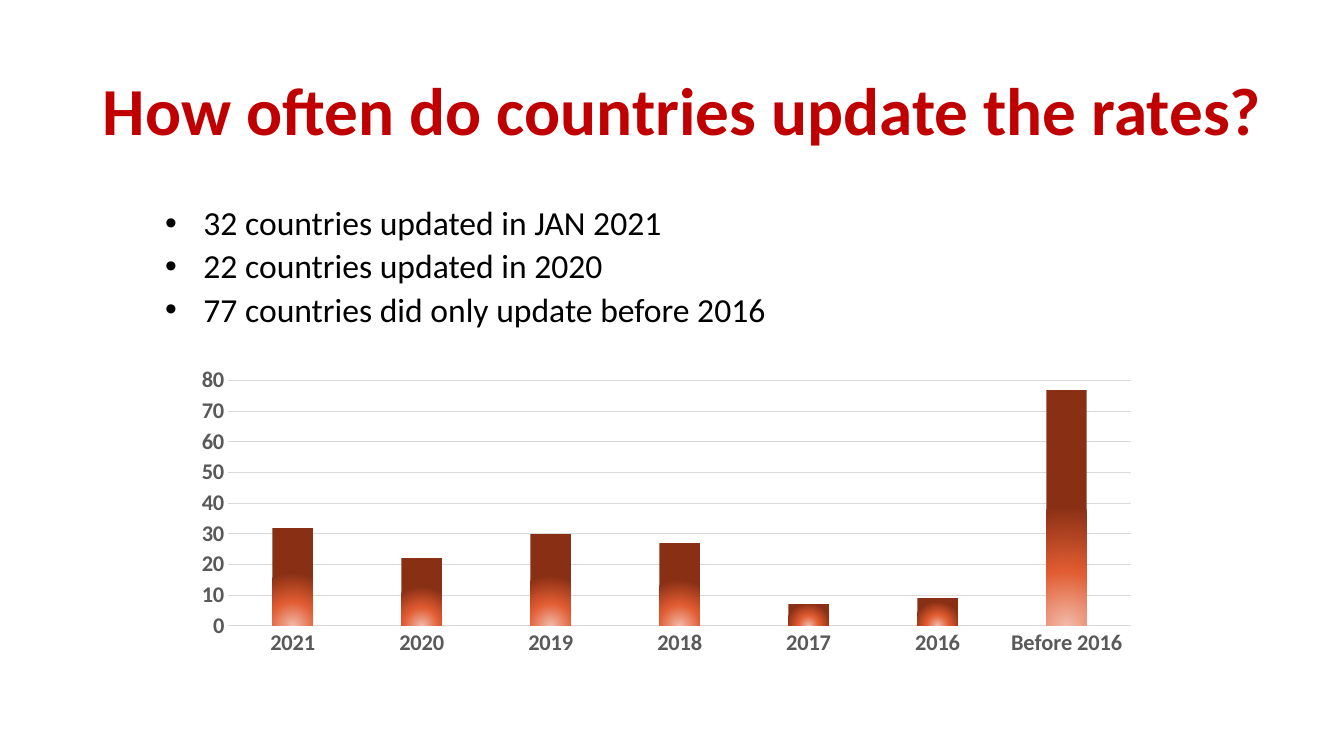
from lxml import etree
from pptx import Presentation
from pptx.chart.data import CategoryChartData
from pptx.dml.color import RGBColor
from pptx.enum.chart import XL_CHART_TYPE, XL_TICK_MARK
from pptx.enum.text import MSO_ANCHOR, PP_ALIGN
from pptx.oxml import parse_xml
from pptx.oxml.ns import qn
from pptx.util import Inches, Pt

COLUMNS = XL_CHART_TYPE.COLUMN_CLUSTERED
NO_TICKS = XL_TICK_MARK.NONE
MIDDLE, TOP, LEFT = MSO_ANCHOR.MIDDLE, MSO_ANCHOR.TOP, PP_ALIGN.LEFT

RED = RGBColor(0xC0, 0x00, 0x00)
BLACK = RGBColor(0x00, 0x00, 0x00)
LABEL_GREY = RGBColor(0x59, 0x59, 0x59)
GRID_GREY = RGBColor(0xD9, 0xD9, 0xD9)
PALE_ORANGE = RGBColor(0xF2, 0xBA, 0xA9)
ORANGE = RGBColor(0xE1, 0x5C, 0x32)
BROWN = RGBColor(0x89, 0x30, 0x14)

FONT = "Calibri"
DRAWING_NS = "http://schemas.openxmlformats.org/drawingml/2006/main"
GLOW_STOPS = [(0, PALE_ORANGE), (46, ORANGE), (100, BROWN)]
FINDINGS = [
    "32 countries updated in JAN 2021",
    "22 countries updated in 2020",
    "77 countries did only update before 2016",
]
UPDATES = {"2021": 32, "2020": 22, "2019": 30, "2018": 27,
           "2017": 7, "2016": 9, "Before 2016": 77}


def style_font(font, size, color, bold=False):
    """Set the typeface, size, colour and weight of a font."""
    font.name, font.size, font.bold = FONT, Pt(size), bold
    font.color.rgb = color


def add_bullet(paragraph):
    """Give a paragraph a black round bullet with a hanging indent."""
    properties = paragraph._p.get_or_add_pPr()
    properties.set("marL", str(Inches(1)))
    properties.set("indent", str(Inches(-0.38)))
    bullet_color = etree.SubElement(properties, qn("a:buClr"))
    etree.SubElement(bullet_color, qn("a:srgbClr"), val=str(BLACK))
    etree.SubElement(properties, qn("a:buFont"), typeface="Arial")
    etree.SubElement(properties, qn("a:buChar"), char="•")


def write_text(frame, lines, size, color, bold=False, anchor=TOP, bullets=False):
    """Fill a text frame with one formatted paragraph per line."""
    frame.word_wrap = True
    frame.vertical_anchor = anchor
    for index, line in enumerate(lines):
        paragraph = frame.add_paragraph() if index else frame.paragraphs[0]
        if bullets:
            add_bullet(paragraph)
            paragraph.level = 1
        paragraph.alignment = LEFT
        paragraph.line_spacing = 0.9
        if index:
            paragraph.space_before = Pt(5)
        run = paragraph.add_run()
        run.text = line
        style_font(run.font, size, color, bold)


def place_title(slide, left, top, width, height):
    """Move the title placeholder to its box and write the question."""
    title = slide.shapes.title
    title.left, title.top, title.width, title.height = left, top, width, height
    write_text(title.text_frame, ["How often do countries update the rates?"],
               size=48, color=RED, bold=True, anchor=MIDDLE)


def place_findings(slide, left, top, width, height):
    """Add the bulleted findings in the given box."""
    findings = slide.shapes.add_textbox(left, top, width, height)
    write_text(findings.text_frame, FINDINGS, size=24, color=BLACK, bullets=True)


def fill_with_glow(series):
    """Fill the columns with a circular gradient rising from their base."""
    stops = "".join(
        f'<a:gs pos="{position * 1000}"><a:srgbClr val="{color}"/></a:gs>'
        for position, color in GLOW_STOPS)
    glow = parse_xml(
        f'<a:gradFill xmlns:a="{DRAWING_NS}" rotWithShape="1">'
        f'<a:gsLst>{stops}</a:gsLst><a:path path="circle">'
        '<a:fillToRect l="50000" t="130000" r="50000" b="-30000"/>'
        '</a:path></a:gradFill>')
    series._element.get_or_add_spPr().insert(0, glow)


def style_axis(axis):
    """Remove the tick marks of an axis and format its labels."""
    axis.major_tick_mark = axis.minor_tick_mark = NO_TICKS
    style_font(axis.tick_labels.font, 16, LABEL_GREY, bold=True)


def draw_thin_line(line):
    """Make a chart line thin and light grey."""
    line.color.rgb = GRID_GREY
    line.width = Pt(0.75)


def place_chart(slide, left, top, width, height):
    """Add the column chart of updates per year in the given box."""
    data = CategoryChartData()
    data.categories = list(UPDATES)
    data.add_series("Series 1", list(UPDATES.values()))
    chart = slide.shapes.add_chart(COLUMNS, left, top, width, height, data).chart
    chart.has_legend = chart.has_title = False
    style_font(chart.font, 10, BLACK)

    plot = chart.plots[0]
    plot.gap_width, plot.overlap = 219, -27
    plot.vary_by_categories = False
    fill_with_glow(plot.series[0])

    years, counts = chart.category_axis, chart.value_axis
    style_axis(years)
    style_axis(counts)
    draw_thin_line(years.format.line)
    counts.format.line.fill.background()
    counts.minimum_scale, counts.maximum_scale, counts.major_unit = 0, 80, 10
    draw_thin_line(counts.major_gridlines.format.line)


def main():
    """Build the slide and save it."""
    deck = Presentation()
    deck.slide_width, deck.slide_height = Inches(13.33), Inches(7.5)
    slide = deck.slides.add_slide(deck.slide_layouts.get_by_name("Title Only"))
    place_title(slide, Inches(0.92), Inches(0.4), Inches(11.89), Inches(1.45))
    place_findings(slide, Inches(0.92), Inches(2), Inches(11.5), Inches(1.4))
    place_chart(slide, Inches(1.81), Inches(3.58), Inches(9.6), Inches(3))
    deck.save("out.pptx")


if __name__ == "__main__":
    main()
